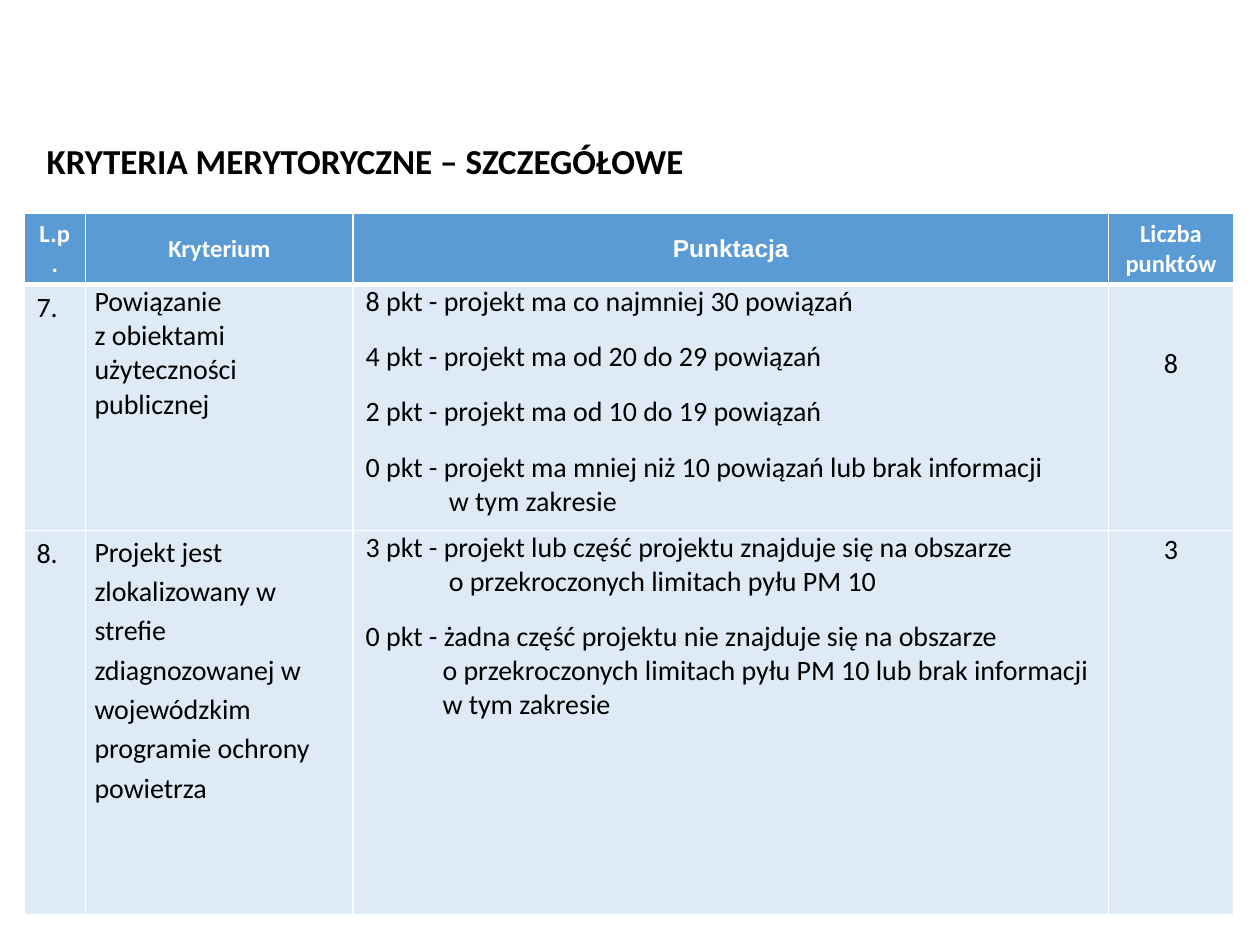
from dataclasses import dataclass
from lxml import etree
from pptx import Presentation
from pptx.dml.color import RGBColor
from pptx.enum.text import MSO_ANCHOR, MSO_AUTO_SIZE, PP_ALIGN
from pptx.oxml.ns import qn
from pptx.util import Inches, Pt

LEFT, CENTER = PP_ALIGN.LEFT, PP_ALIGN.CENTER
TOP, MIDDLE = MSO_ANCHOR.TOP, MSO_ANCHOR.MIDDLE
FIT_SHAPE = MSO_AUTO_SIZE.SHAPE_TO_FIT_TEXT
TITLE_ONLY = 5
SLIDE_W, SLIDE_H = 10, 7.5


@dataclass(frozen=True)
class Theme:
    font: str = "Calibri"
    alt_font: str = "Arial"
    title: int = 20
    header: int = 14
    body: int = 16
    ink: str = "000000"
    white: str = "FFFFFF"
    header_fill: str = "5B9BD5"
    body_fill: str = "DEEBF7"


THEME = Theme()
TITLE_BOX = (0.27, 1.05, 5.3, 0.44)
TABLE_BOX = (0.19, 1.69, 9.6, 5.57)
COLUMNS = (0.49, 2.12, 5.99, 0.99)
ROWS = (0.57, 1.95, 3.05)
HEADERS = ("L.p.", "Kryterium", "Punktacja", "Liczba punktów")
CRITERIA = [
    dict(
        number="7.",
        name="Powiązanie\vz obiektami użyteczności publicznej",
        name_spacing=1.0,
        scores=[
            ("8 pkt - projekt ma co najmniej 30 powiązań", 0.66),
            ("4 pkt - projekt ma od 20 do 29 powiązań", 0.66),
            ("2 pkt - projekt ma od 10 do 19 powiązań", 0.66),
            ("0 pkt - projekt ma mniej niż 10 powiązań lub brak informacji\v"
             "w tym zakresie", 0.66),
        ],
        points="8", points_top=0.45, points_spacing=1.15,
    ),
    dict(
        number="8.",
        name="Projekt jest zlokalizowany w strefie zdiagnozowanej w "
             "wojewódzkim programie ochrony powietrza",
        name_spacing=1.15,
        scores=[
            ("3 pkt - projekt lub część projektu znajduje się na obszarze\v"
             "o przekroczonych limitach pyłu PM 10", 0.66),
            ("0 pkt - żadna część projektu nie znajduje się na obszarze\v"
             "o przekroczonych limitach pyłu PM 10 lub brak informacji\v"
             "w tym zakresie", 0.61),
        ],
        points="3", points_top=0, points_spacing=1.07,
    ),
]


def write(p, text, size=THEME.body, font=THEME.font, color=THEME.ink,
          bold=False, align=LEFT, spacing=1.0, before=0, left=0, hang=0):
    pPr = p._p.get_or_add_pPr()
    pPr.set("marL", str(Inches(left + hang)))
    pPr.set("indent", str(-Inches(hang)))
    p.text = text
    p.alignment = align
    p.line_spacing = spacing
    p.space_before = Pt(before)
    p.space_after = Pt(0)
    for r in p.runs:
        r.font.size = Pt(size)
        r.font.name = font
        r.font.bold = bold
        r.font.color.rgb = RGBColor.from_string(color)


def border(cell, bottom):
    tcPr = cell._tc.get_or_add_tcPr()
    for i, (side, width) in enumerate(zip("LRTB", (1, 1, 1, bottom))):
        ln = etree.Element(qn(f"a:ln{side}"), w=str(Pt(width)))
        fill = etree.SubElement(ln, qn("a:solidFill"))
        etree.SubElement(fill, qn("a:srgbClr"), val=THEME.white)
        tcPr.insert(i, ln)


def style_cell(cell, fill, anchor=TOP, margins=(0.1, 0.05, 0.1, 0.05), bottom=1):
    cell.fill.solid()
    cell.fill.fore_color.rgb = RGBColor.from_string(fill)
    cell.vertical_anchor = anchor
    (cell.margin_left, cell.margin_top,
     cell.margin_right, cell.margin_bottom) = map(Inches, margins)
    border(cell, bottom)
    return cell.text_frame


def add_title(s, box, text):
    sp = s.shapes.title
    sp.left, sp.top, sp.width, sp.height = map(Inches, box)
    tf = sp.text_frame
    tf.word_wrap = False
    tf.auto_size = FIT_SHAPE
    tf.vertical_anchor = MIDDLE
    write(tf.paragraphs[0], text, size=THEME.title, bold=True)


def fill_header(cells):
    for cell, text in zip(cells, HEADERS):
        tf = style_cell(cell, THEME.header_fill, anchor=MIDDLE, bottom=3)
        font = THEME.alt_font if text == "Punktacja" else THEME.font
        write(tf.paragraphs[0], text, size=THEME.header, font=font,
              color=THEME.white, bold=True, align=CENTER)


def fill_criterion(cells, item):
    number, name, scores, points = cells
    tf = style_cell(number, THEME.body_fill)
    write(tf.paragraphs[0], item["number"])
    tf = style_cell(name, THEME.body_fill, margins=(0.07, 0, 0.07, 0))
    write(tf.paragraphs[0], item["name"], spacing=item["name_spacing"])
    tf = style_cell(scores, THEME.body_fill, margins=(0, 0, 0, 0))
    for i, (text, hang) in enumerate(item["scores"]):
        p = tf.add_paragraph() if i else tf.paragraphs[0]
        write(p, text, left=0.1, hang=hang, before=12 if i else 0)
    tf = style_cell(points, THEME.body_fill,
                    margins=(0, item["points_top"], 0, 0))
    write(tf.paragraphs[0], item["points"], align=CENTER,
          spacing=item["points_spacing"])


def add_criteria_table(s, box):
    left, top, width, height = box
    table = s.shapes.add_table(len(ROWS), len(COLUMNS), *map(Inches, box)).table
    table.horz_banding = False
    for column, share in zip(table.columns, COLUMNS):
        column.width = Inches(width * share / sum(COLUMNS))
    for row, share in zip(table.rows, ROWS):
        row.height = Inches(height * share / sum(ROWS))
    header, *body = table.rows
    fill_header(header.cells)
    for row, item in zip(body, CRITERIA):
        fill_criterion(row.cells, item)


def main():
    prs = Presentation()
    prs.slide_width, prs.slide_height = Inches(SLIDE_W), Inches(SLIDE_H)
    s = prs.slides.add_slide(prs.slide_layouts[TITLE_ONLY])
    add_title(s, TITLE_BOX, "KRYTERIA MERYTORYCZNE – SZCZEGÓŁOWE")
    add_criteria_table(s, TABLE_BOX)
    prs.save("out.pptx")


if __name__ == "__main__":
    main()
